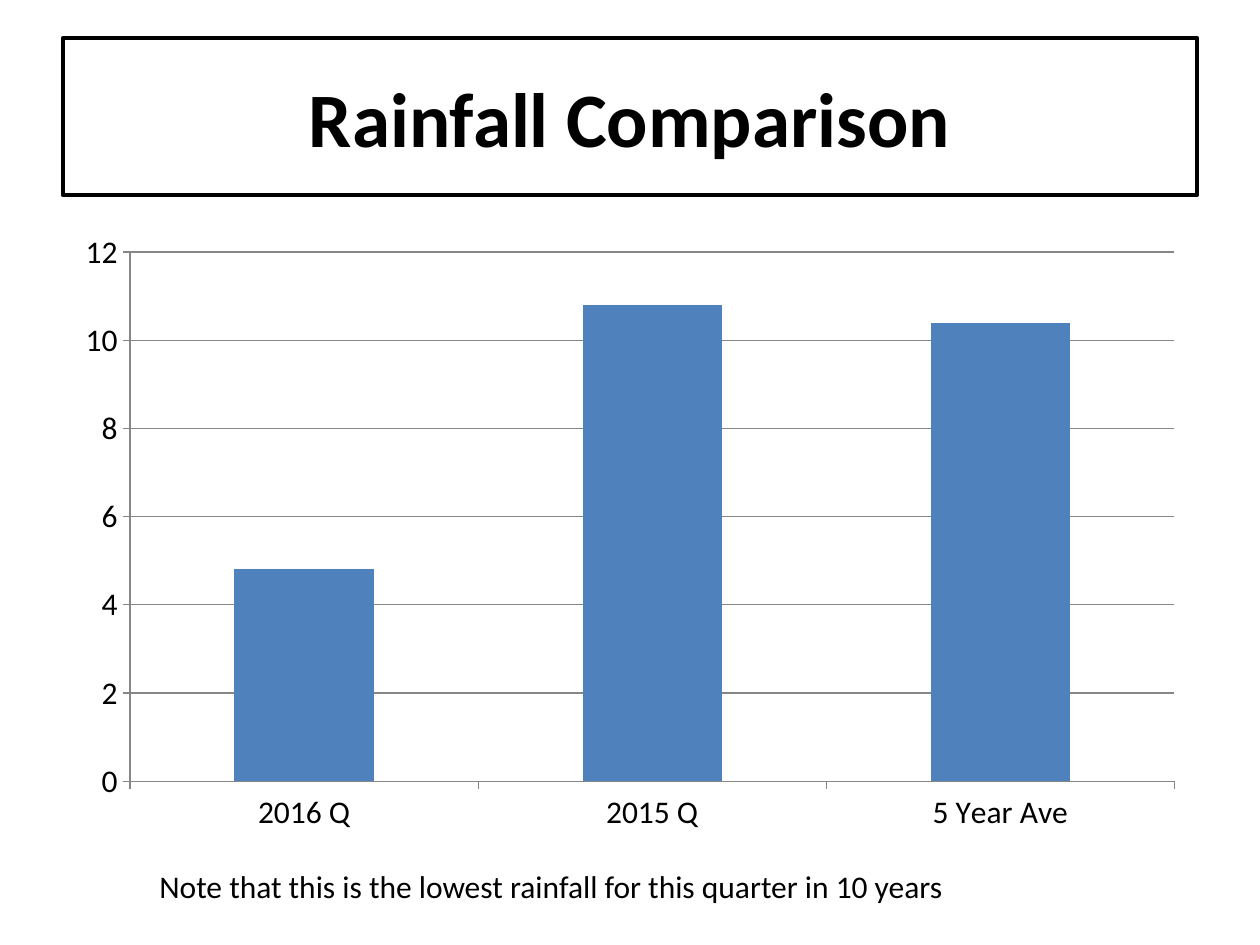
from pptx import Presentation
from pptx.chart.data import CategoryChartData
from pptx.dml.color import RGBColor
from pptx.enum.chart import XL_CHART_TYPE, XL_TICK_MARK
from pptx.enum.text import MSO_ANCHOR, PP_ALIGN
from pptx.util import Pt

COLUMN = XL_CHART_TYPE.COLUMN_CLUSTERED
OUT, NONE = XL_TICK_MARK.OUTSIDE, XL_TICK_MARK.NONE
MIDDLE, TOP = MSO_ANCHOR.MIDDLE, MSO_ANCHOR.TOP
CENTER, LEFT = PP_ALIGN.CENTER, PP_ALIGN.LEFT

COLORS = {"ink": "000000", "bar": "4F81BD", "grid": "868686"}
FONT = "Calibri"
RAIN = {"2016 Q": 4.8, "2015 Q": 10.8, "5 Year Ave": 10.4}
CHART = (36, 126, 648, 356.4)
TEXTS = [
    {"text": "Rainfall Comparison", "box": (36, 21.6, 648, 90),
     "font": {"size": Pt(44), "bold": True},
     "frame": {"vertical_anchor": MIDDLE}, "align": CENTER, "line": 2.25},
    {"text": "Note that this is the lowest rainfall for this quarter in 10 years",
     "box": (84, 492, 480, 30),
     "font": {"size": Pt(18), "bold": False},
     "frame": {"vertical_anchor": TOP}, "align": LEFT, "line": 0},
]


def tint(name):
    return RGBColor.from_string(COLORS[name])


def apply(item, values):
    for key, value in values.items():
        setattr(item, key, value)


def style(font, values):
    apply(font, {"name": FONT, **values})
    font.color.rgb = tint("ink")


def stroke(line, name, width):
    line.color.rgb = tint(name)
    line.width = Pt(width)


def add_text(slide, item):
    box = slide.shapes.add_textbox(*map(Pt, item["box"]))
    frame = box.text_frame
    apply(frame, {"word_wrap": True, **item["frame"]})
    para = frame.paragraphs[0]
    para.alignment = item["align"]
    run = para.add_run()
    run.text = item["text"]
    style(run.font, item["font"])
    if item["line"]:
        stroke(box.line, "ink", item["line"])


def add_bars(slide):
    data = CategoryChartData()
    data.categories = list(RAIN)
    data.add_series("Series 1", list(RAIN.values()))
    chart = slide.shapes.add_chart(COLUMN, *map(Pt, CHART), data).chart
    apply(chart, {"has_legend": False, "has_title": False})
    style(chart.font, {"size": Pt(18)})
    plot = chart.plots[0]
    apply(plot, {"gap_width": 150, "vary_by_categories": False})
    fill = plot.series[0].format.fill
    fill.solid()
    fill.fore_color.rgb = tint("bar")
    for axis in (chart.category_axis, chart.value_axis):
        apply(axis, {"major_tick_mark": OUT, "minor_tick_mark": NONE})
        stroke(axis.format.line, "grid", 0.75)
    scale = chart.value_axis
    apply(scale, {"minimum_scale": 0, "maximum_scale": 12, "major_unit": 2,
                  "has_major_gridlines": True})
    stroke(scale.major_gridlines.format.line, "grid", 0.75)


deck = Presentation()
apply(deck, {"slide_width": Pt(720), "slide_height": Pt(540)})
slide = deck.slides.add_slide(deck.slide_layouts[6])
title, note = TEXTS
add_text(slide, title)
add_bars(slide)
add_text(slide, note)
deck.save("out.pptx")
